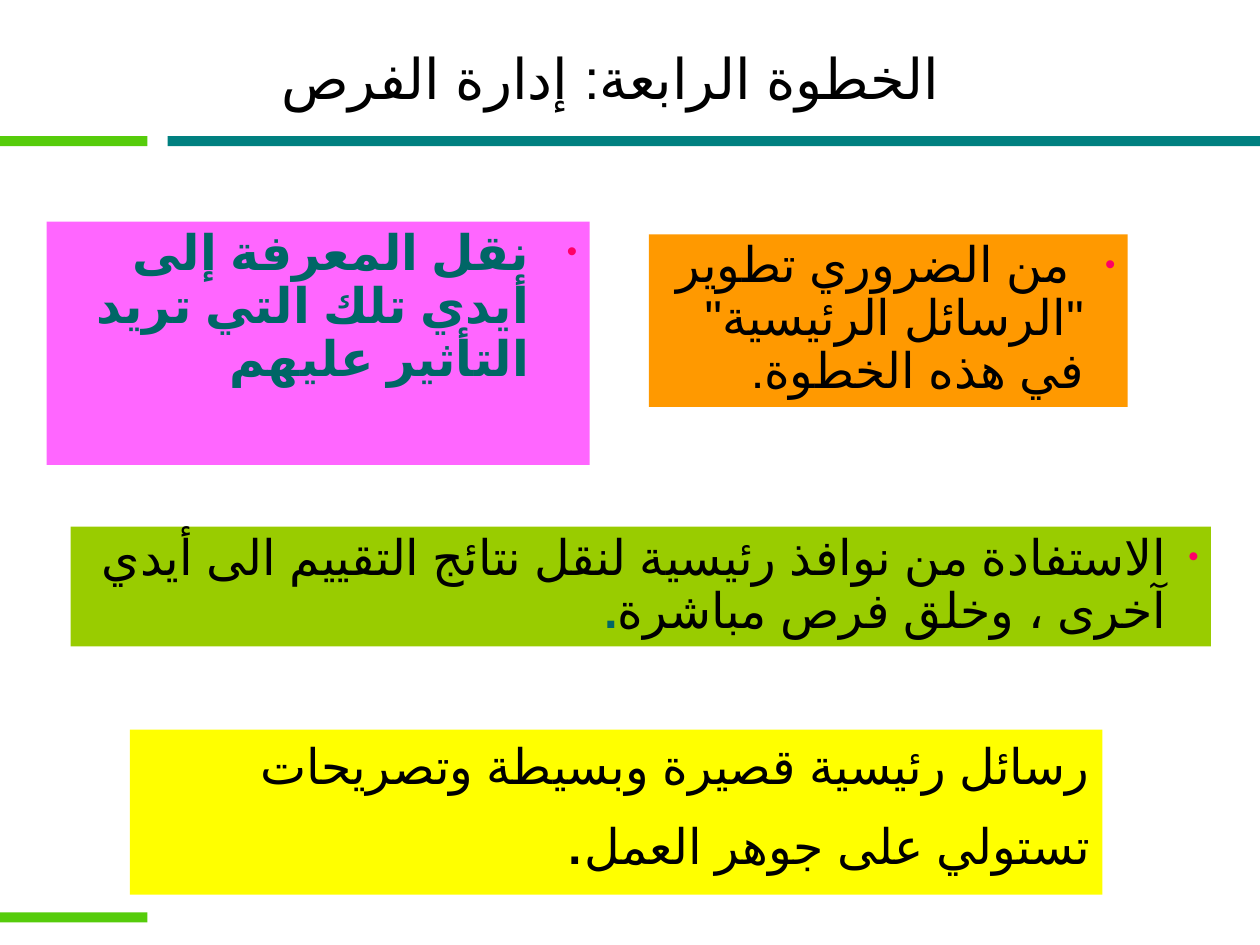
"""Build the slide on managing opportunities, laid out on a 100 by 75 grid."""
from dataclasses import dataclass
from typing import Optional

from lxml.etree import SubElement
from pptx import Presentation
from pptx.dml.color import RGBColor as RGB
from pptx.enum.lang import MSO_LANGUAGE_ID as LANG
from pptx.enum.shapes import MSO_SHAPE as SHAPE
from pptx.enum.text import MSO_ANCHOR as ANCHOR, MSO_AUTO_SIZE as FIT, PP_ALIGN as ALIGN
from pptx.oxml.ns import qn
from pptx.util import Inches, Pt

FONT = "Arial"
COLS, ROWS = 100, 75
BLACK = RGB(0x00, 0x00, 0x00)
TEAL = RGB(0x00, 0x80, 0x80)
DARK_TEAL = RGB(0x00, 0x66, 0x66)
GREEN = RGB(0x56, 0xCC, 0x0B)
PINK = RGB(0xFF, 0x66, 0xFF)
YELLOW = RGB(0xFF, 0xFF, 0x00)
LIME = RGB(0x99, 0xCC, 0x00)
ORANGE = RGB(0xFF, 0x99, 0x00)
BULLET = "FF0066"

prs = Presentation()
prs.slide_width, prs.slide_height = Inches(10), Inches(7.5)


@dataclass(frozen=True)
class Area:
    """A rectangle in grid columns and rows."""
    col: float
    row: float
    cols: float
    rows: float

    def emu(self) -> tuple:
        """Return left, top, width and height in EMU."""
        w, h = prs.slide_width / COLS, prs.slide_height / ROWS
        return tuple(round(v) for v in (self.col * w, self.row * h, self.cols * w, self.rows * h))


@dataclass(frozen=True)
class Card:
    """A filled box with one right-to-left paragraph."""
    area: Area
    fill: RGB
    text: str
    hang: Optional[float] = None
    fit: FIT = FIT.NONE
    stop: Optional[dict] = None


BARS = [
    (Area(13.3, 10.8, 86.7, 0.8), TEAL),
    (Area(0, 10.8, 11.7, 0.8), GREEN),
    (Area(0, 72.4, 11.7, 0.8), GREEN),
]
TITLE = Area(5.1, 0, 86.7, 12.3)
TRANSFER = Card(Area(3.7, 17.6, 43.1, 19.3), PINK,
                "نقل المعرفة إلى أيدي تلك التي تريد التأثير عليهم", hang=0.38)
CARDS = [
    Card(Area(10.3, 57.9, 77.2, 13.1), YELLOW,
         "رسائل رئيسية قصيرة وبسيطة وتصريحات تستولي على جوهر العمل", stop={"size": 40}),
    Card(Area(5.6, 41.8, 90.5, 9.5), LIME,
         "الاستفادة من نوافذ رئيسية لنقل نتائج التقييم الى أيدي آخرى ، وخلق فرص مباشرة",
         hang=0.25, fit=FIT.SHAPE_TO_FIT_TEXT, stop={"color": DARK_TEAL, "bold": True}),
    Card(Area(51.5, 18.6, 38, 13.7), ORANGE,
         ' من الضروري تطوير "الرسائل الرئيسية" في هذه الخطوة.',
         hang=0.25, fit=FIT.SHAPE_TO_FIT_TEXT),
]


def place(sp, area: Area) -> None:
    """Move a shape to its grid area."""
    sp.left, sp.top, sp.width, sp.height = area.emu()


def add_box(slide, area: Area, fill: RGB):
    """Add a plain filled rectangle."""
    sp = slide.shapes.add_shape(SHAPE.RECTANGLE, *area.emu())
    sp.shadow.inherit = False
    sp.fill.solid()
    sp.fill.fore_color.rgb = fill
    sp.line.fill.background()
    return sp


def add_run(p, text: str, *, size: float = 28, color: RGB = BLACK, bold: bool = False) -> None:
    """Add a formatted Arabic run, with the font set for its script as well."""
    r = p.add_run()
    r.text = text
    r.font.name, r.font.size, r.font.bold = FONT, Pt(size), bold
    r.font.language_id = LANG.ARABIC
    r.font.color.rgb = color
    SubElement(r.font._element, qn("a:cs"), typeface=FONT)


def set_bullet(p, hang: float) -> None:
    """Give a paragraph a coloured bullet and a hanging indent."""
    pPr = p._p.get_or_add_pPr()
    pPr.set("marL", str(Inches(hang)))
    pPr.set("indent", str(-Inches(hang)))
    SubElement(SubElement(pPr, qn("a:buClr")), qn("a:srgbClr"), val=BULLET)
    SubElement(pPr, qn("a:buSzPct"), val="60000")
    SubElement(pPr, qn("a:buFont"), typeface=FONT)
    SubElement(pPr, qn("a:buChar"), char="•")


def start_text(sp, align: ALIGN, anchor: ANCHOR, fit: FIT = FIT.NONE):
    """Set up a shape's text frame and return its right-to-left paragraph."""
    tf = sp.text_frame
    tf.word_wrap, tf.auto_size, tf.vertical_anchor = True, fit, anchor
    p = tf.paragraphs[0]
    p.alignment, p.space_before = align, Pt(0)
    p._p.get_or_add_pPr().set("rtl", "1")
    return p


def write_card(sp, card: Card, **fmt) -> None:
    """Write a card's text into its shape."""
    p = start_text(sp, ALIGN.RIGHT, ANCHOR.TOP, card.fit)
    if card.hang:
        p.line_spacing = 0.9
        set_bullet(p, card.hang)
    add_run(p, card.text, **fmt)
    if card.stop:
        add_run(p, ".", **card.stop)


def main() -> None:
    """Build and save the slide."""
    slide = prs.slides.add_slide(prs.slide_layouts[1])
    for area, fill in BARS:
        add_box(slide, area, fill)

    title, body = slide.shapes.title, slide.placeholders[1]
    place(title, TITLE)
    add_run(start_text(title, ALIGN.CENTER, ANCHOR.MIDDLE),
            "الخطوة الرابعة: إدارة الفرص", size=32)

    place(body, TRANSFER.area)
    body.fill.solid()
    body.fill.fore_color.rgb = TRANSFER.fill
    write_card(body, TRANSFER, color=DARK_TEAL, bold=True)

    for card in CARDS:
        write_card(add_box(slide, card.area, card.fill), card)
    prs.save("out.pptx")


if __name__ == "__main__":
    main()
